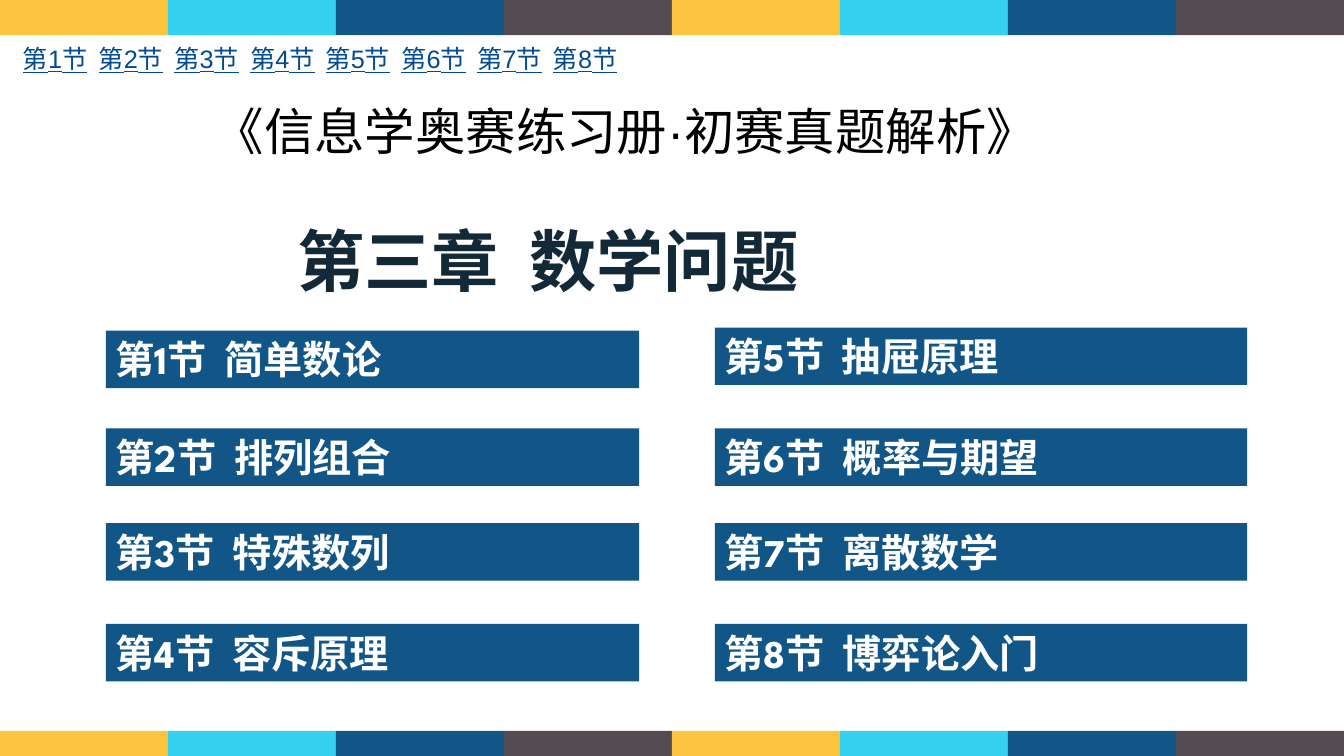
import pptx
import pptx.util
import pptx.dml.color
import pptx.enum.shapes
import pptx.enum.text

WIDE, HIGH = 13.33, 7.5
COLS = 8
HUES = {
    "gold": "FCC540", "sky": "35D1F1", "blue": "115686", "gray": "554C51",
    "bar": "115687", "title": "142938", "link": "034A90",
    "black": "000000", "white": "FFFFFF",
}
BAND = ["gold", "sky", "blue", "gray"]
LEFT = ["简单数论", "排列组合", "特殊数列", "容斥原理"]
RIGHT = ["抽屉原理", "概率与期望", "离散数学", "博弈论入门"]
ROWS = [4.25, 5.19, 6.19]


def inch(*nums):
    return [pptx.util.Inches(n) for n in nums]


def tint(hue):
    return pptx.dml.color.RGBColor.from_string(HUES[hue])


def style(run, size, face, hue, bold=False, under=False):
    font = run.font
    font.size = pptx.util.Pt(size)
    font.name = face
    font.bold = bold
    font.underline = under
    font.color.rgb = tint(hue)


def block(host, box, hue):
    """Plain filled rectangle."""
    rect = host.add_shape(pptx.enum.shapes.MSO_SHAPE.RECTANGLE, *inch(*box))
    rect.shadow.inherit = False
    rect.fill.solid()
    rect.fill.fore_color.rgb = tint(hue)
    rect.line.fill.background()
    return rect


def write(shape, text, *look):
    """One left-aligned line of text in one style."""
    frame = shape.text_frame
    frame.word_wrap = True
    frame.vertical_anchor = pptx.enum.text.MSO_ANCHOR.TOP
    frame.text = text
    line = frame.paragraphs[0]
    line.alignment = pptx.enum.text.PP_ALIGN.LEFT
    for run in line.runs:
        style(run, *look)


def band(slide, top, high):
    """Strip of coloured blocks across the slide."""
    group = slide.shapes.add_group_shape()
    step = WIDE / COLS
    for col in range(COLS):
        block(group.shapes, (col * step, top, step, high), BAND[col % len(BAND)])


def label(slide, box, text, *look):
    write(slide.shapes.add_textbox(*inch(*box)), text, *look)


def links(slide, box):
    """Row of underlined section names."""
    frame = slide.shapes.add_textbox(*inch(*box)).text_frame
    frame.word_wrap = True
    line = frame.paragraphs[0]
    for num in range(1, 9):
        if num > 1:
            gap = line.add_run()
            gap.text = "  "
            style(gap, 18, "Arial", "black")
        run = line.add_run()
        run.text = f"第{num}节"
        style(run, 18, "Arial", "link", under=True)


def column(slide, left, wide, tops, names, first):
    """Stack of section bars."""
    for num, (top, name) in enumerate(zip(tops, names), first):
        bar = block(slide.shapes, (left, top, wide, 0.57), "bar")
        write(bar, f"第{num}节  {name}", 28, "League Spartan", "white", True)


def main():
    deck = pptx.Presentation()
    deck.slide_width, deck.slide_height = inch(WIDE, HIGH)
    slide = deck.slides.add_slide(deck.slide_layouts[6])

    # Bands along both edges
    band(slide, HIGH - 0.25, 0.25)
    band(slide, 0, 0.35)

    # Book and chapter titles
    label(slide, (2.85, 2.13, 7.55, 0.91), "第三章  数学问题",
          48, "Roboto Condensed", "title", True)
    label(slide, (2.02, 0.94, 8.45, 0.71), "《信息学奥赛练习册·初赛真题解析》",
          36, "Arial", "black")

    # Section bars
    column(slide, 1.05, 5.29, [3.28] + ROWS, LEFT, 1)
    column(slide, 7.09, 5.28, [3.25] + ROWS, RIGHT, 5)

    # Section links
    links(slide, (0.13, 0.38, 6.67, 0.4))
    deck.save("out.pptx")


if __name__ == "__main__":
    main()
